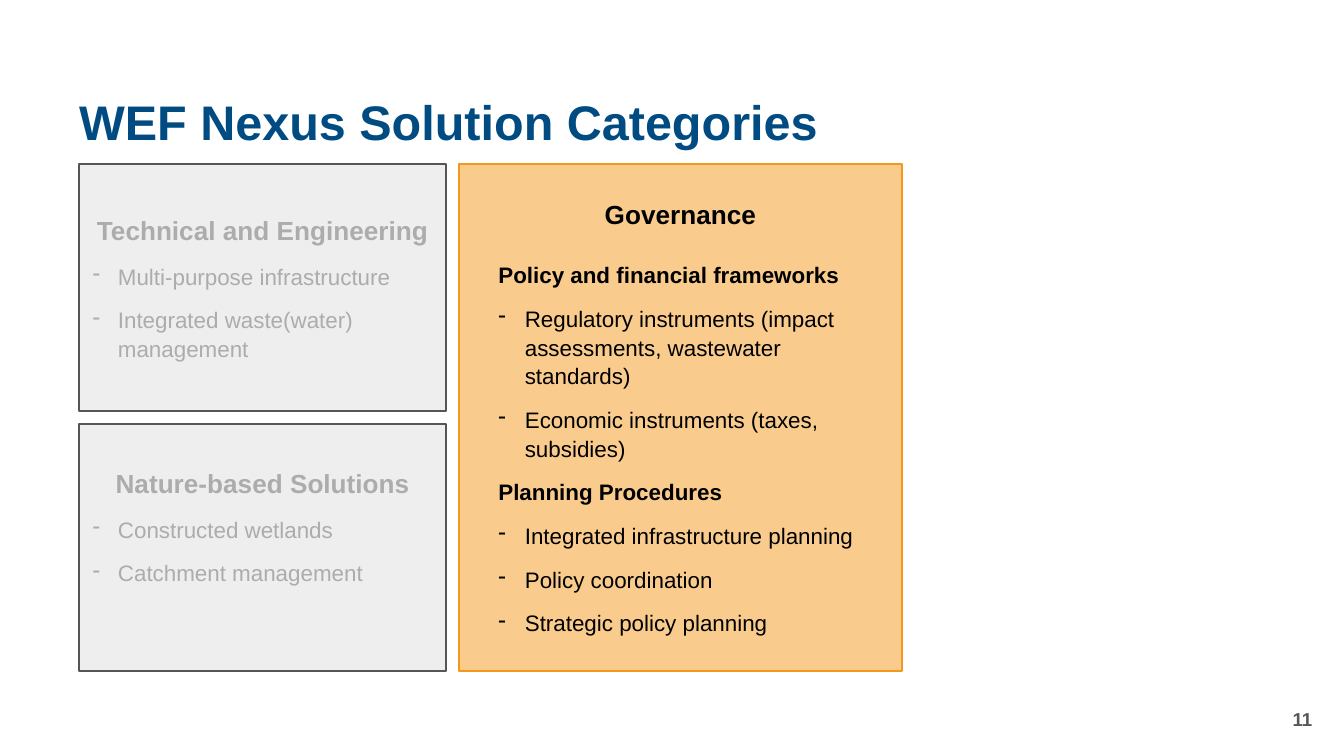
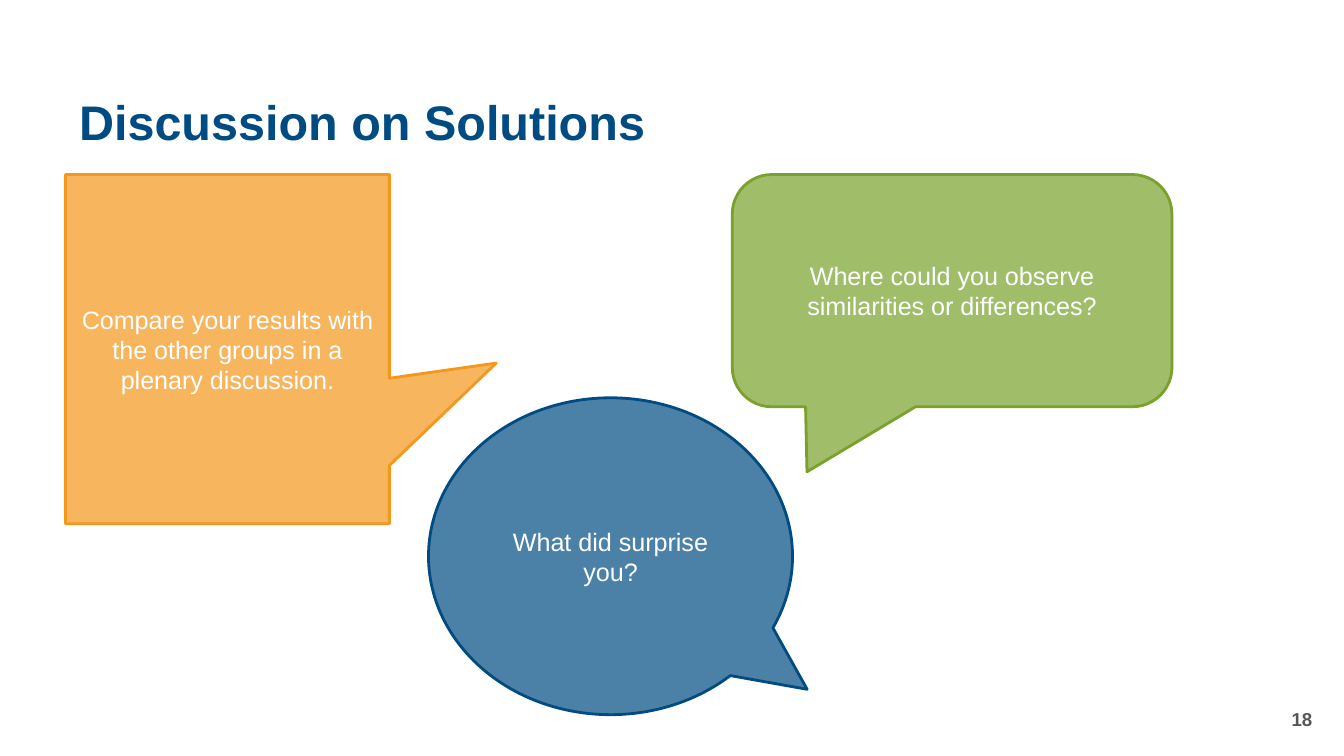
from pptx import Presentation
from pptx.dml.color import RGBColor
from pptx.enum.shapes import MSO_SHAPE
from pptx.enum.text import MSO_ANCHOR, MSO_AUTO_SIZE, PP_ALIGN
from pptx.oxml.ns import qn
from pptx.util import Cm, Pt
from lxml.etree import SubElement

FONT = "Arial"
BLUE, ORANGE, GREEN = "004C82", "F4971A", "79A12C"
BLACK, WHITE, PAGE_GREY = "000000", "FFFFFF", "575756"
MUTED_FILL, MUTED_LINE, MUTED_TEXT = "EEEEEE", "555555", "ACACAC"

CATEGORY_LEFT, CATEGORY_TOP = 1.5, 3.1
CATEGORY_WIDTH, CATEGORY_HEIGHT, CATEGORY_GAP = 6.93, 4.67, 0.24
HEADING, ITEM = "heading", "item"


def color(value):
    return RGBColor.from_string(value)


def add_run(paragraph, text, size, ink, bold=False):
    run = paragraph.add_run()
    run.text = text
    run.font.name = FONT
    run.font.size = Pt(size)
    run.font.bold = bold
    run.font.color.rgb = color(ink)


def next_paragraph(frame):
    first = frame.paragraphs[0]
    return frame.add_paragraph() if first.runs else first


def indent(paragraph, left, hanging, bullet=None):
    properties = paragraph._p.get_or_add_pPr()
    properties.set("marL", str(Cm(left)))
    properties.set("indent", str(-Cm(hanging)))
    if bullet:
        SubElement(properties, qn("a:buChar")).set("char", bullet)


def add_slide(deck, heading, number):
    slide = deck.slides.add_slide(deck.slide_layouts[5])
    title = slide.shapes.title
    title.left, title.top, title.width, title.height = Cm(1.24), Cm(1.6), Cm(23.8), Cm(1.5)
    frame = title.text_frame
    frame.auto_size = MSO_AUTO_SIZE.NONE
    frame.vertical_anchor = MSO_ANCHOR.MIDDLE
    paragraph = frame.paragraphs[0]
    paragraph.alignment = PP_ALIGN.LEFT
    paragraph.line_spacing = 0.9
    add_run(paragraph, heading, 26, BLUE, True)

    page = slide.shapes.add_textbox(Cm(19.33), Cm(13.21), Cm(5.72), Cm(0.76)).text_frame
    page.word_wrap = True
    page.vertical_anchor = MSO_ANCHOR.MIDDLE
    page.paragraphs[0].alignment = PP_ALIGN.RIGHT
    add_run(page.paragraphs[0], str(number), 10, PAGE_GREY, True)
    return slide


def add_panel(slide, preset, box, fill, line, line_width, opacity=100):
    panel = slide.shapes.add_shape(preset, *map(Cm, box))
    panel.shadow.inherit = False
    panel.fill.solid()
    panel.fill.fore_color.rgb = color(fill)
    if opacity < 100:
        tint = panel._element.spPr.find(qn("a:solidFill"))[0]
        SubElement(tint, qn("a:alpha")).set("val", str(opacity * 1000))
    panel.line.color.rgb = color(line)
    panel.line.width = Pt(line_width)
    panel.text_frame.word_wrap = True
    panel.text_frame.vertical_anchor = MSO_ANCHOR.MIDDLE
    return panel


def add_category_name(frame, name, ink, space_after):
    paragraph = next_paragraph(frame)
    paragraph.alignment = PP_ALIGN.CENTER
    paragraph.space_after = Pt(space_after)
    add_run(paragraph, name, 14, ink, True)
    return paragraph


def add_entry(frame, text, ink, left, hanging, kind=ITEM):
    paragraph = next_paragraph(frame)
    paragraph.alignment = PP_ALIGN.LEFT
    paragraph.line_spacing = 1.07
    paragraph.space_after = Pt(8)
    indent(paragraph, left, hanging, "-" if kind == ITEM else None)
    add_run(paragraph, text, 12, ink, kind == HEADING)


def add_muted_category(slide, row, name, solutions, bottom_inset=0.13):
    top = CATEGORY_TOP + row * (CATEGORY_HEIGHT + CATEGORY_GAP)
    box = (CATEGORY_LEFT, top, CATEGORY_WIDTH, CATEGORY_HEIGHT)
    frame = add_panel(slide, MSO_SHAPE.RECTANGLE, box, MUTED_FILL, MUTED_LINE, 1).text_frame
    frame.margin_bottom = Cm(bottom_inset)
    add_category_name(frame, name, MUTED_TEXT, 8).line_spacing = 1.07
    for solution in solutions:
        add_entry(frame, solution, MUTED_TEXT, 0.48, 0.48)


def add_governance(slide, entries):
    left = CATEGORY_LEFT + CATEGORY_WIDTH + CATEGORY_GAP
    box = (left, CATEGORY_TOP, 8.38, 2 * CATEGORY_HEIGHT + CATEGORY_GAP)
    frame = add_panel(slide, MSO_SHAPE.RECTANGLE, box, ORANGE, ORANGE, 1, 49).text_frame
    add_category_name(frame, "Governance", BLACK, 16)
    for kind, text in entries:
        add_entry(frame, text, BLACK, 1, 0.5, kind)


def add_callout(slide, preset, box, tint, pointer, question):
    callout = add_panel(slide, preset, box, tint, tint, 1.5, 70)
    for index, value in enumerate(pointer):
        callout.adjustments[index] = value
    paragraph = callout.text_frame.paragraphs[0]
    paragraph.alignment = PP_ALIGN.CENTER
    add_run(paragraph, question, 13.5, WHITE)


def build_categories(deck):
    slide = add_slide(deck, "WEF Nexus Solution Categories", 11)
    add_governance(slide, [
        (HEADING, "Policy and financial frameworks"),
        (ITEM, "Regulatory instruments (impact assessments, wastewater standards)"),
        (ITEM, "Economic instruments (taxes, subsidies)"),
        (HEADING, "Planning Procedures"),
        (ITEM, "Integrated infrastructure planning"),
        (ITEM, "Policy coordination"),
        (ITEM, "Strategic policy planning"),
    ])
    add_muted_category(slide, 0, "Technical and Engineering",
                       ["Multi-purpose infrastructure", "Integrated waste(water) management"])
    add_muted_category(slide, 1, "Nature-based Solutions",
                       ["Constructed wetlands", "Catchment management"], bottom_inset=0.93)


def build_discussion(deck):
    slide = add_slide(deck, "Discussion on Solutions", 18)
    add_callout(slide, MSO_SHAPE.OVAL_CALLOUT, (8.1, 7.52, 6.88, 5.99), BLUE,
                (0.54, 0.42), "What did surprise you?")
    add_callout(slide, MSO_SHAPE.ROUNDED_RECTANGULAR_CALLOUT, (13.84, 3.3, 8.31, 4.39), GREEN,
                (-0.33, 0.78, 0.17), "Where could you observe similarities or differences?")
    add_callout(slide, MSO_SHAPE.RECTANGULAR_CALLOUT, (1.24, 3.3, 6.12, 6.6), ORANGE,
                (0.83, 0.04), "Compare your results with the other groups in a plenary discussion.")


def main():
    deck = Presentation()
    deck.slide_width, deck.slide_height = Cm(25.4), Cm(14.29)
    build_categories(deck)
    build_discussion(deck)
    deck.save("out.pptx")


if __name__ == "__main__":
    main()
